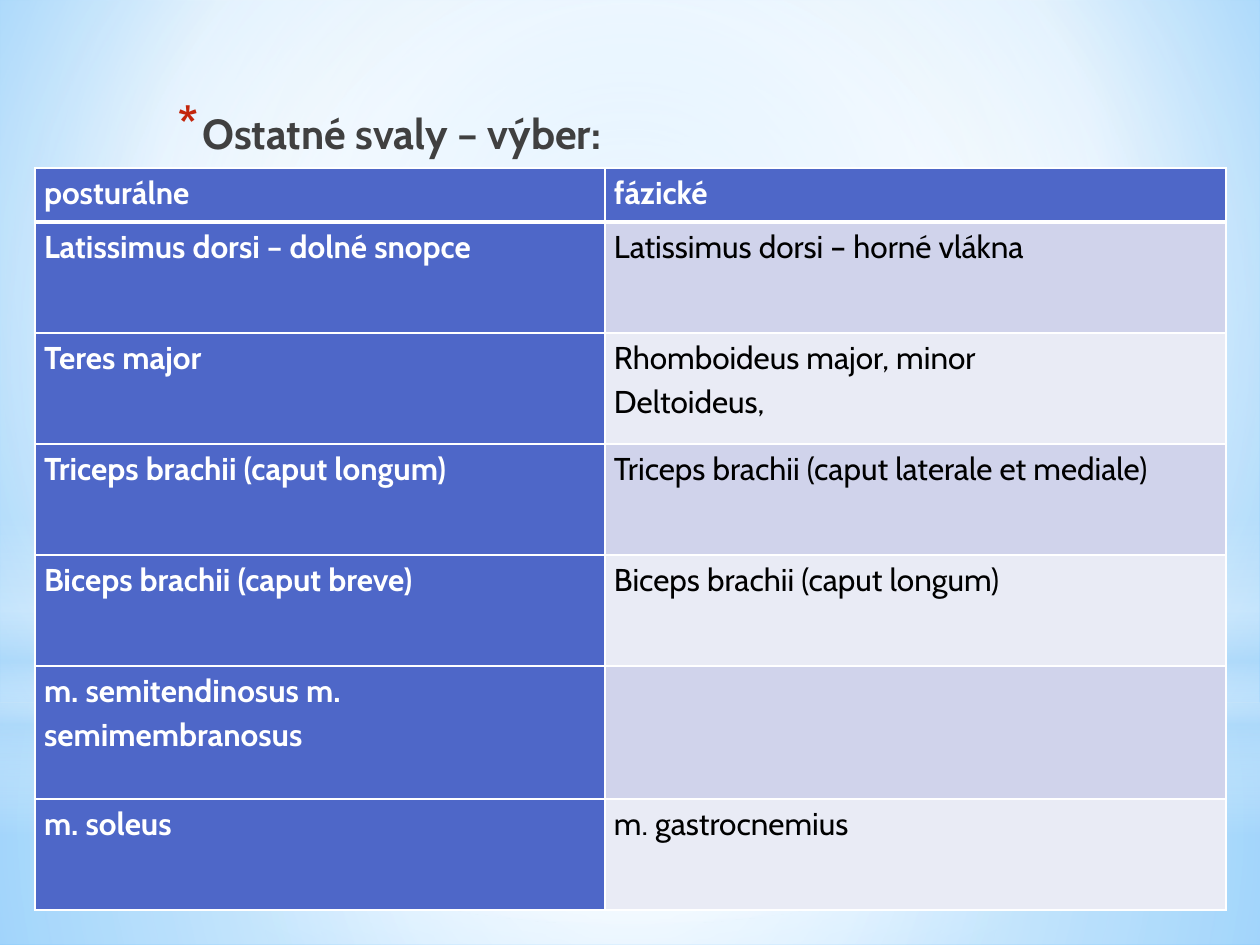
from lxml import etree
from pptx import Presentation, util as u
from pptx.dml.color import RGBColor
from pptx.enum import shapes, text
from pptx.oxml.ns import qn

FONT = "Cabin"
WHITE = RGBColor(0xFF, 0xFF, 0xFF)
BLACK = RGBColor(0, 0, 0)
GREY = RGBColor(0x40, 0x40, 0x40)
RED = RGBColor(0xC3, 0x26, 0x0C)
BLUE = RGBColor(0x4E, 0x67, 0xC8)
BANDS = RGBColor(0xD0, 0xD3, 0xEB), RGBColor(0xE9, 0xEB, 0xF5)
PALE = RGBColor(0xB4, 0xDC, 0xFA)
SKY = RGBColor(0x9E, 0xD5, 0xFF)
DEEP = RGBColor(0x5B, 0xB9, 0xFF)
MID = (50, 50, 50, 50)

COLS = 570, 621
ROWS = 54, 111, 111, 111, 111, 133, 111
CELLS = [
    ("posturálne", "fázické"),
    ("Latissimus dorsi – dolné snopce", "Latissimus dorsi – horné vlákna"),
    ("Teres major", "Rhomboideus major, minor\nDeltoideus,"),
    ("Triceps brachii (caput longum)", "Triceps brachii (caput laterale et mediale)"),
    ("Biceps brachii (caput breve)", "Biceps brachii (caput longum)"),
    ("m. semitendinosus m. semimembranosus", ""),
    ("m. soleus", "m. gastrocnemius"),
]


def px(n):
    return u.Emu(round(n * 914400 / 126))


def node(up, tag, **attrs):
    return etree.SubElement(up, qn(tag), {k: str(v) for k, v in attrs.items()})


def blend(root, stops, focus=None):
    flat = root.find(qn("a:solidFill"))
    grad = etree.Element(qn("a:gradFill"), rotWithShape="1")
    flat.getparent().replace(flat, grad)
    marks = node(grad, "a:gsLst")
    for pos, color, alpha in stops:
        stop = node(marks, "a:gs", pos=pos * 1000)
        tint = node(stop, "a:srgbClr", val=color)
        if alpha < 100:
            node(tint, "a:alpha", val=alpha * 1000)
    if focus:
        way = node(grad, "a:path", path="circle")
        sides = {k: v * 1000 for k, v in zip("ltrb", focus)}
        node(way, "a:fillToRect", **sides)
    else:
        node(grad, "a:lin", ang=5400000, scaled=0)


def glow(slide, kind, top, high, stops, focus=None):
    shape = slide.shapes.add_shape(kind, 0, px(top), px(1260), px(high))
    shape.shadow.inherit = False
    shape.line.fill.background()
    shape.fill.solid()
    blend(shape.element.spPr, stops, focus)


def style(para, size, color, bold):
    font = para.font
    font.name, font.size, font.bold = FONT, u.Pt(size), bold
    font.color.rgb = color


def title(slide, words):
    frame = slide.shapes.add_textbox(px(158), px(101), px(882), px(84)).text_frame
    frame.word_wrap = True
    para = frame.paragraphs[0]
    para.text = words
    props = para._p.get_or_add_pPr()
    props.set("marL", str(px(32)))
    props.set("indent", str(px(-25)))
    node(node(props, "a:buClr"), "a:srgbClr", val=RED)
    node(props, "a:buSzPct", val=130000)
    node(props, "a:buChar", char="*")
    para.space_before, para.space_after = u.Pt(5), u.Pt(3)
    style(para, 24, GREY, True)


def border(cell, row):
    props = cell._tc.get_or_add_tcPr()
    wide = {"T": 3 if row == 1 else 1, "B": 3 if row == 0 else 1}
    for i, side in enumerate("LRTB"):
        line = etree.Element(qn("a:ln" + side), w=str(u.Pt(wide.get(side, 1))))
        node(node(line, "a:solidFill"), "a:srgbClr", val=WHITE)
        props.insert(i, line)


def fill(cell, words, row, col):
    head = row == 0 or col == 0
    cell.fill.solid()
    cell.fill.fore_color.rgb = BLUE if head else BANDS[(row - 1) % 2]
    cell.margin_left = cell.margin_right = px(9)
    cell.margin_top = cell.margin_bottom = 0
    cell.vertical_anchor = text.MSO_ANCHOR.TOP
    cell.text = words
    for para in cell.text_frame.paragraphs:
        para.line_spacing = 1.15
        style(para, 18, WHITE if head else BLACK, head)
    border(cell, row)


def grid(slide):
    frame = slide.shapes.add_table(
        len(ROWS), len(COLS), px(35), px(168), px(sum(COLS)), px(sum(ROWS)))
    table = frame.table
    table.horz_banding = False
    for col, wide in zip(table.columns, COLS):
        col.width = px(wide)
    for r, high in enumerate(ROWS):
        table.rows[r].height = px(high)
        for c, words in enumerate(CELLS[r]):
            fill(table.cell(r, c), words, r, c)


def main():
    deck = Presentation()
    deck.slide_width, deck.slide_height = px(1260), px(945)
    slide = deck.slides.add_slide(deck.slide_layouts[6])
    slide.background.fill.solid()
    blend(slide.element.find(".//" + qn("p:bgPr")),
          [(0, SKY, 100), (60, WHITE, 100), (100, DEEP, 100)], (20, 10, 20, 60))
    rect, oval = shapes.MSO_SHAPE.RECTANGLE, shapes.MSO_SHAPE.OVAL
    glow(slide, rect, 703, 242,
         [(0, WHITE, 91), (37, WHITE, 76), (100, PALE, 79)], MID)
    glow(slide, rect, 0, 703,
         [(0, WHITE, 89), (48, WHITE, 62), (100, PALE, 79)], MID)
    glow(slide, rect, 519, 315,
         [(0, WHITE, 0), (29, WHITE, 30), (45, PALE, 40),
          (55, WHITE, 26), (65, PALE, 60), (100, WHITE, 0)])
    glow(slide, oval, 221, 703, [(0, WHITE, 100), (56, WHITE, 0)], MID)
    title(slide, "Ostatné svaly – výber:")
    grid(slide)
    deck.save("out.pptx")


if __name__ == "__main__":
    main()
